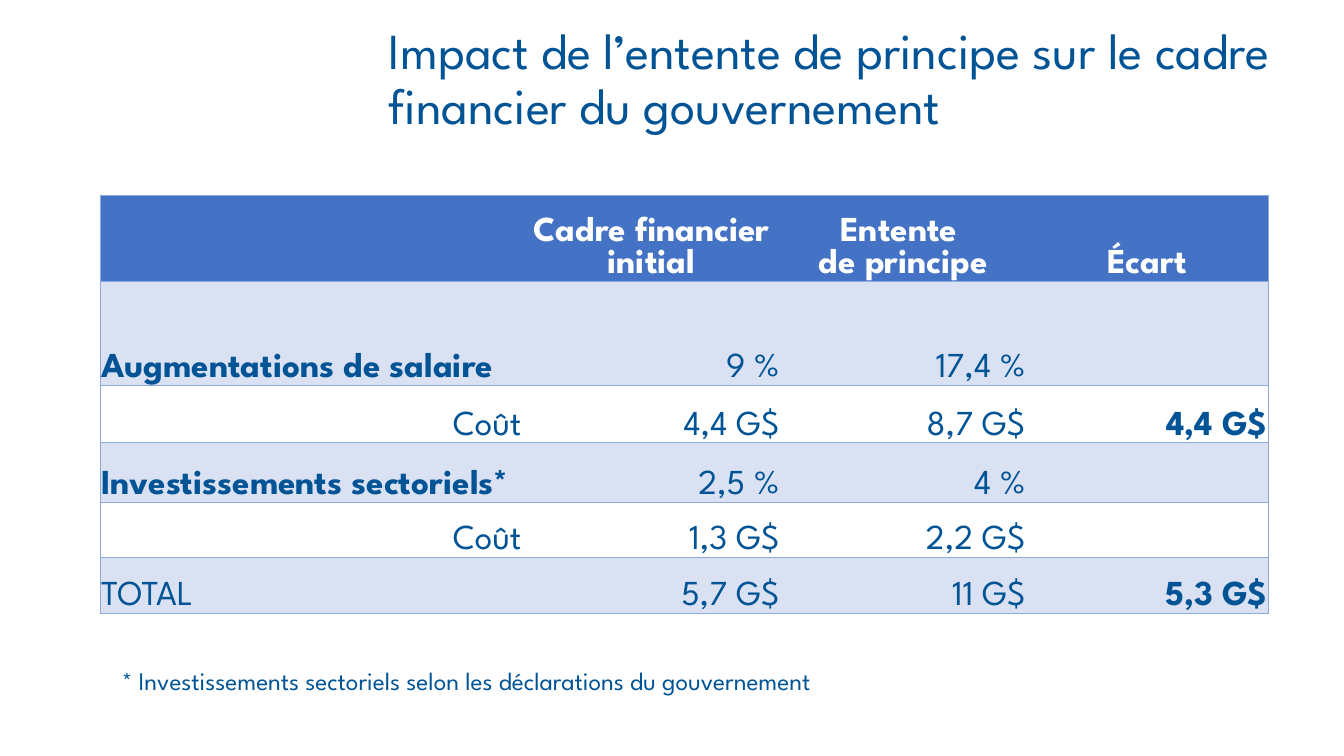
from lxml import etree
from pptx import Presentation
from pptx import util as u
from pptx.dml.color import RGBColor
from pptx.enum import text
from pptx.oxml import parse_xml
from pptx.oxml.ns import nsdecls

FONT = "League Spartan"
COLORS = {"navy": "005395", "white": "FFFFFF", "header": "4472C4", "band": "D9E1F2", "rule": "8EA9DB"}
LEFT, CENTER, RIGHT = text.PP_ALIGN.LEFT, text.PP_ALIGN.CENTER, text.PP_ALIGN.RIGHT
COLUMN_WIDTHS = [301.7, 184.3, 175.7, 172.8]
ROW_HEIGHTS = [61.9, 74.2, 41, 42.5, 39.6, 39.6]
BUDGET = [
    ["", "Cadre financier initial", "Entente \nde principe", "Écart"],
    ["Augmentations de salaire", "9 %", "17,4 %", ""],
    ["Coût", "4,4 G$", "8,7 G$", "4,4 G$"],
    ["Investissements sectoriels*", "2,5 %", "4 %", ""],
    ["Coût", "1,3 G$", "2,2 G$", ""],
    ["TOTAL", "5,7 G$", "11 G$", "5,3 G$"],
]


def write(frame, wording, size, color="navy", bold=False, align=LEFT, spacing=None):
    """Fill a text frame with one paragraph for each line of wording."""
    frame.word_wrap = True
    for index, line in enumerate(wording.split("\n")):
        paragraph = frame.paragraphs[0] if index == 0 else frame.add_paragraph()
        paragraph.alignment = align
        if spacing:
            paragraph.line_spacing = spacing
        run = paragraph.add_run()
        run.text = line
        run.font.name, run.font.size, run.font.bold = FONT, u.Pt(size), bold
        run.font.color.rgb = RGBColor.from_string(COLORS[color])


def add_heading(slide, left, top, width, height):
    """Place the slide heading in its box."""
    heading = slide.shapes.add_textbox(u.Pt(left), u.Pt(top), u.Pt(width), u.Pt(height))
    write(heading.text_frame, "Impact de l’entente de principe sur le cadre financier du gouvernement",
          36, spacing=0.9)


def add_footnote(slide, left, top, width, height):
    """Place the footnote that explains the asterisk."""
    footnote = slide.shapes.add_textbox(u.Pt(left), u.Pt(top), u.Pt(width), u.Pt(height))
    write(footnote.text_frame, "* Investissements sectoriels selon les déclarations du gouvernement", 18)
    footnote.text_frame.auto_size = text.MSO_AUTO_SIZE.SHAPE_TO_FIT_TEXT


def rule_cell(cell, sides):
    """Draw thin rules on the given sides of a cell and clear the other sides."""
    properties = cell._tc.get_or_add_tcPr()
    for place, side in enumerate("LRTB"):
        paint = (f'<a:solidFill><a:srgbClr val="{COLORS["rule"]}"/></a:solidFill>'
                 if side in sides else "<a:noFill/>")
        edge = parse_xml(f'<a:ln{side} {nsdecls("a")} w="{u.Pt(0.5)}">{paint}</a:ln{side}>')
        properties.insert(place, edge)


def style_cell(cell, row, column):
    """Set the margins, fill, rules and wording of one budget cell."""
    cell.margin_left = cell.margin_right = cell.margin_top = u.Pt(0.75)
    cell.margin_bottom = 0
    cell.vertical_anchor = text.MSO_ANCHOR.BOTTOM
    if row == 0 or row % 2:
        cell.fill.solid()
        cell.fill.fore_color.rgb = RGBColor.from_string(COLORS["band" if row else "header"])
    else:
        cell.fill.background()
    rule_cell(cell, "TB" + {0: "L", 3: "R"}.get(column, ""))
    wording = BUDGET[row][column]
    if not wording:
        return
    section = column == 0 and row in (1, 3)
    if row == 0:
        align = CENTER
    elif section or wording == "TOTAL":
        align = LEFT
    else:
        align = RIGHT
    write(cell.text_frame, wording, 25, "navy" if row else "white",
          row == 0 or section or column == 3, align)


def add_budget(slide, left, top):
    """Place the table comparing the initial budget with the agreement."""
    frame = slide.shapes.add_table(len(ROW_HEIGHTS), len(COLUMN_WIDTHS), u.Pt(left), u.Pt(top),
                                   u.Pt(sum(COLUMN_WIDTHS)), u.Pt(sum(ROW_HEIGHTS)))
    budget = frame.table
    budget.first_row = budget.horz_banding = False
    for column, width in enumerate(COLUMN_WIDTHS):
        budget.columns[column].width = u.Pt(width)
    for row, height in enumerate(ROW_HEIGHTS):
        budget.rows[row].height = u.Pt(height)
        for column in range(len(COLUMN_WIDTHS)):
            style_cell(budget.cell(row, column), row, column)


def main():
    """Build the slide and save it."""
    deck = Presentation()
    deck.slide_width, deck.slide_height = u.Pt(960), u.Pt(540)
    slide = deck.slides.add_slide(deck.slide_layouts[6])
    add_heading(slide, 270.7, 15.1, 682.6, 73.4)
    add_budget(slide, 71.5, 139.2)
    add_footnote(slide, 80, 471.6, 625.7, 28.8)
    deck.save("out.pptx")


if __name__ == "__main__":
    main()
